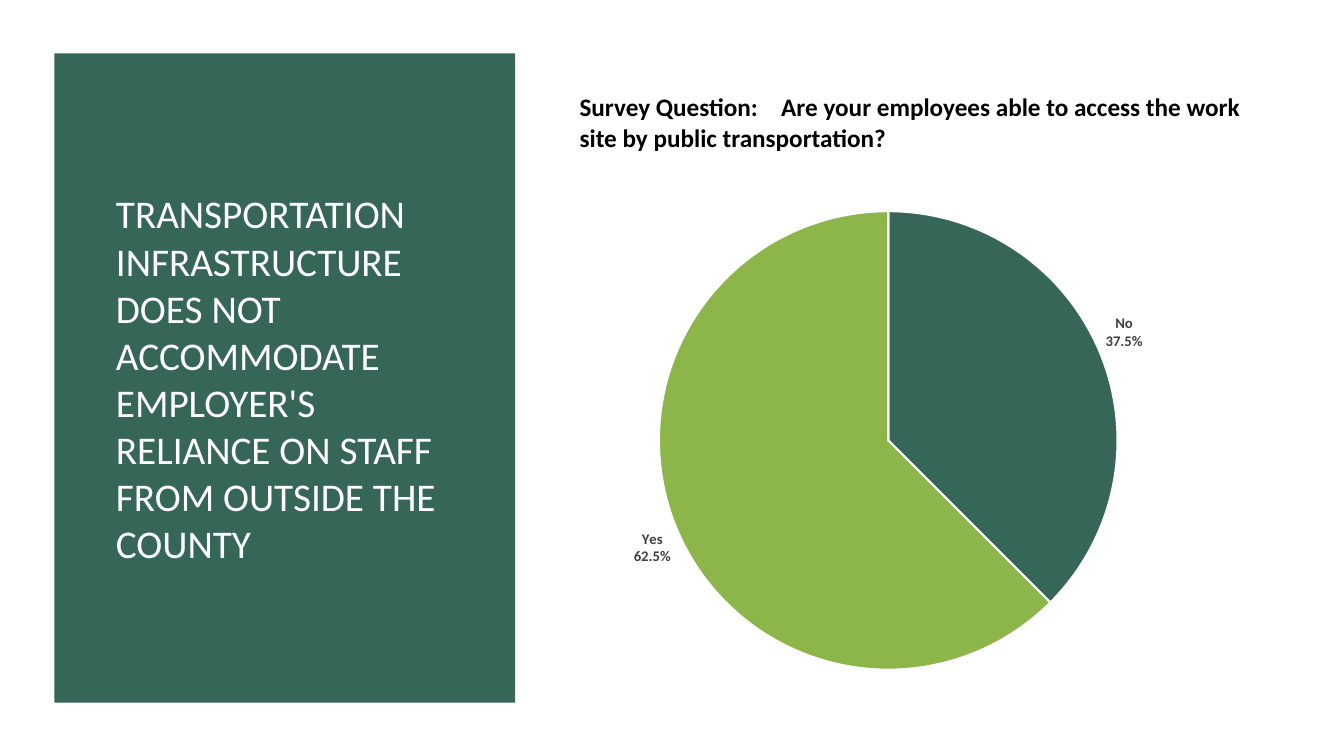
"""Build the transportation survey slide with a title panel and a pie chart."""
from lxml.etree import SubElement
from pptx import Presentation
from pptx.chart.data import CategoryChartData
from pptx.dml.color import RGBColor
from pptx.enum.chart import XL_CHART_TYPE as ChartType, XL_LABEL_POSITION as LabelPosition
from pptx.enum.shapes import MSO_SHAPE as Shape
from pptx.enum.text import MSO_ANCHOR as Anchor, MSO_AUTO_SIZE as AutoSize, PP_ALIGN as Align
from pptx.oxml import parse_xml
from pptx.oxml.ns import nsdecls, qn
from pptx.util import Inches, Pt

GREEN = RGBColor(0x36, 0x66, 0x58)
LIME = RGBColor(0x8C, 0xB6, 0x4A)
GREY = RGBColor(0x40, 0x40, 0x40)
WHITE = RGBColor(0xFF, 0xFF, 0xFF)
BLACK = RGBColor(0x00, 0x00, 0x00)


def style_font(font, size, color, bold=False):
    font.name = "Calibri"
    font.size = Pt(size)
    font.color.rgb = color
    font.bold = bold


def add_rectangle(page, left, top, width, height, color):
    box = page.shapes.add_shape(
        Shape.RECTANGLE, Inches(left), Inches(top), Inches(width), Inches(height)
    )
    box.shadow.inherit = False
    box.fill.solid()
    box.fill.fore_color.rgb = color
    box.line.fill.background()
    return box


deck = Presentation()
deck.slide_width, deck.slide_height = Inches(13.33), Inches(7.5)
page = deck.slides.add_slide(deck.slide_layouts[5])

title = page.shapes.title
title.left, title.top = Inches(1.05), Inches(1.22)
title.width, title.height = Inches(3.58), Inches(5.06)
frame = title.text_frame
frame.text = (
    "TRANSPORTATION INFRASTRUCTURE DOES NOT ACCOMMODATE EMPLOYER'S "
    "RELIANCE ON STAFF FROM OUTSIDE THE COUNTY"
)
frame.word_wrap = True
frame.auto_size = AutoSize.NONE
frame.vertical_anchor = Anchor.MIDDLE
para = frame.paragraphs[0]
para.alignment = Align.LEFT
para.line_spacing = 1.0
style_font(para.runs[0].font, 28, WHITE)

panel = add_rectangle(page, 0.54, 0.53, 4.57, 6.44, GREEN)
title.element.addprevious(panel.element)

question = add_rectangle(page, 5.65, 0.86, 6.95, 0.71, WHITE)
frame = question.text_frame
frame.text = (
    "Survey Question:\tAre your employees able to access the work site by public transportation?"
)
frame.word_wrap = True
frame.auto_size = AutoSize.SHAPE_TO_FIT_TEXT
frame.vertical_anchor = Anchor.TOP
para = frame.paragraphs[0]
para.alignment = Align.LEFT
style_font(para.runs[0].font, 18, BLACK, bold=True)
tabs = SubElement(question.element.find(".//" + qn("a:pPr")), qn("a:tabLst"))
SubElement(tabs, qn("a:tab"), pos=str(Inches(2)), algn="l")

answers = CategoryChartData(number_format="0.0")
answers.categories = ["No", "Yes"]
answers.add_series("Series 1", [37.5, 62.5])
chart = page.shapes.add_chart(
    ChartType.PIE, Inches(5.01), Inches(1.95), Inches(7.6), Inches(4.84), answers
).chart
chart.has_legend = False
chart.has_title = False
style_font(chart.font, 10, BLACK)

plot = chart.plots[0]
plot.vary_by_categories = True
series = plot.series[0]
for index, color in enumerate([GREEN, LIME]):
    slice_format = series.points[index].format
    slice_format.fill.solid()
    slice_format.fill.fore_color.rgb = color
    slice_format.line.color.rgb = WHITE
    slice_format.line.width = Pt(1.5)

labels = series.data_labels
labels.show_value = False
labels.show_category_name = True
labels.show_percentage = True
labels.number_format = "0.0%"
labels.number_format_is_linked = False
labels.position = LabelPosition.OUTSIDE_END
style_font(labels.font, 10.5, GREY, bold=True)

chart_xml = chart.element
separator = parse_xml(f"<c:separator {nsdecls('c')}>\n</c:separator>")
chart_xml.find(".//" + qn("c:ser")).find(
    qn("c:dLbls") + "/" + qn("c:showBubbleSize")
).addnext(separator)

plot_area = chart_xml.find(".//" + qn("c:plotArea"))
for old_layout in plot_area.findall(qn("c:layout")):
    plot_area.remove(old_layout)
layout = parse_xml(f"<c:layout {nsdecls('c')}/>")
plot_area.insert(0, layout)
manual = SubElement(layout, qn("c:manualLayout"))
for tag, value in [
    ("layoutTarget", "inner"), ("xMode", "edge"), ("yMode", "edge"),
    ("x", "0.2"), ("y", "0.03"), ("w", "0.6"), ("h", "0.94"),
]:
    SubElement(manual, qn("c:" + tag), val=value)

deck.save("out.pptx")
